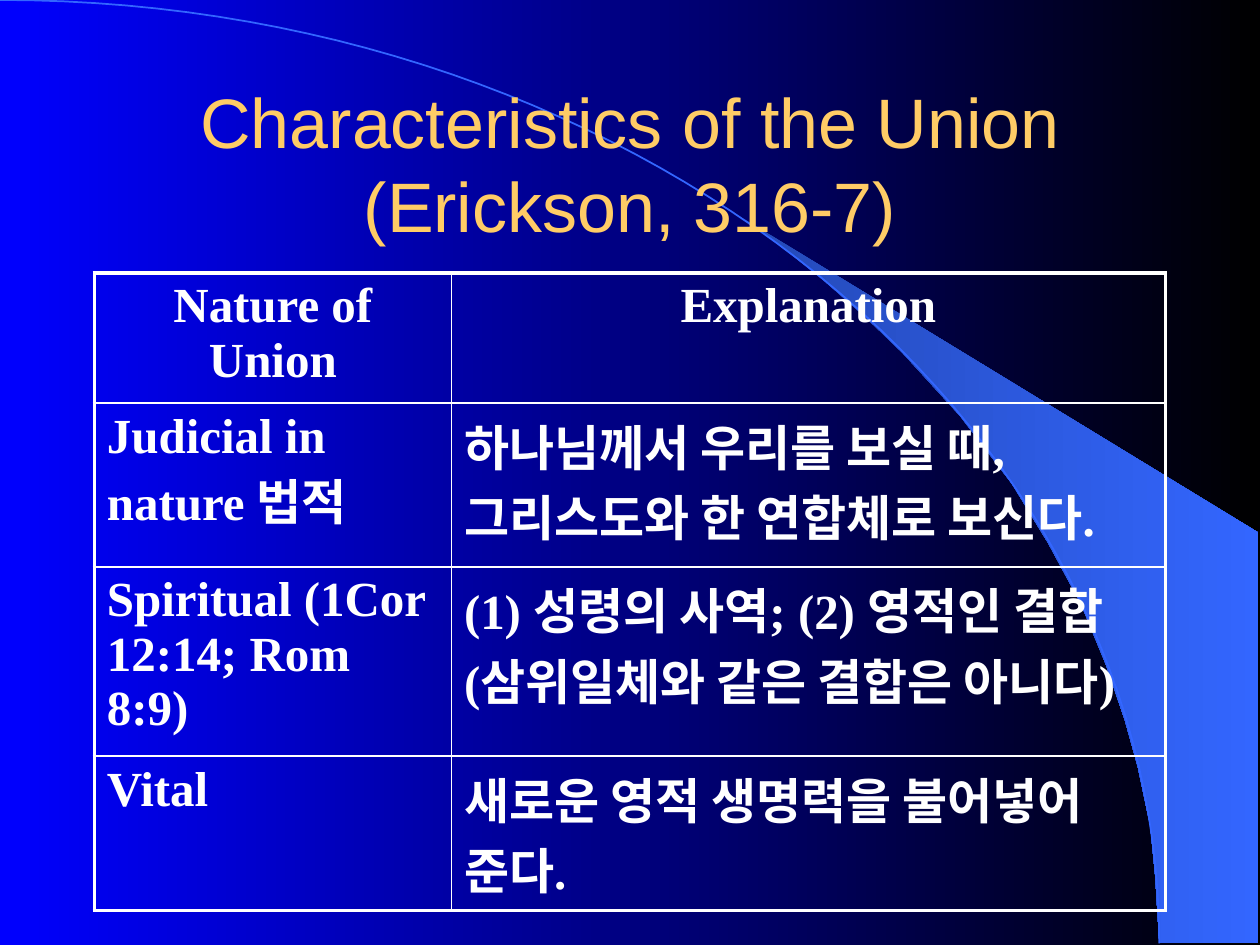
from lxml import etree
from pptx import Presentation
from pptx.dml.color import RGBColor
from pptx.enum.text import MSO_ANCHOR as Anchor, PP_ALIGN as Align
from pptx.oxml import parse_xml
from pptx.oxml.ns import nsdecls
from pptx.util import Cm, Pt


def color(hex_code):
    return RGBColor.from_string(hex_code)


def fade(fill, start, end):
    fill.gradient()
    fill.gradient_angle = 0
    for stop, hex_code, position in zip(fill.gradient_stops, (start, end), (0, 1)):
        stop.color.rgb = color(hex_code)
        stop.position = position


prs = Presentation()
prs.slide_width, prs.slide_height = Cm(25.4), Cm(19.05)
slide = prs.slides.add_slide(prs.slide_layouts[6])
fade(slide.background.fill, "0000FF", "000000")

beam_points = [
    (23.37, 19), (25.37, 19.02), (25.37, 10.74), (14.96, 4.39), (15.85, 5.05),
    (16.59, 5.64), (17.4, 6.35), (18.19, 7.11), (19.35, 8.38), (20.4, 9.75),
    (21.13, 10.95), (21.79, 12.17), (22.3, 13.41), (22.68, 14.53),
    (22.94, 15.47), (23.19, 16.66), (23.29, 17.68),
]
steps = 60
arc_points = []
for step in range(steps + 1):
    t = step / steps
    x = 3 * 12.9 * t * (1 - t) ** 2 + 3 * 23.37 * t ** 2 * (1 - t) + 23.37 * t ** 3
    y = 3 * 8.51 * t ** 2 * (1 - t) + 19.02 * t ** 3
    arc_points.append((x, y))

outlines = []
for points, closed in ((beam_points, True), (arc_points, False)):
    corners = [(Cm(x), Cm(y)) for x, y in points]
    builder = slide.shapes.build_freeform(*corners[0])
    builder.add_line_segments(corners[1:], close=closed)
    outline = builder.convert_to_shape()
    outline.shadow.inherit = False
    outlines.append(outline)
beam, arc = outlines
fade(beam.fill, "2449B6", "3366FF")
beam.line.fill.background()
arc.fill.background()
arc.line.color.rgb = color("3366FF")
arc.line.width = Pt(1)

title = slide.shapes.add_textbox(Cm(1.9), Cm(1.68), Cm(21.6), Cm(3.18)).text_frame
title.word_wrap = True
title.vertical_anchor = Anchor.MIDDLE
title.text = "Characteristics of the Union (Erickson, 316-7)"
heading = title.paragraphs[0]
heading.alignment = Align.CENTER
heading.font.name = "Arial"
heading.font.size = Pt(40)
heading.font.color.rgb = color("FFCC66")

union_rows = [
    ("Nature of Union", "Explanation"),
    ("Judicial in nature 법적", "하나님께서 우리를 보실 때, 그리스도와 한 연합체로 보신다."),
    ("Spiritual (1Cor 12:14; Rom 8:9)",
     "(1) 성령의 사역; (2) 영적인 결합 (삼위일체와 같은 결합은 아니다)"),
    ("Vital", "새로운 영적 생명력을 불어넣어 준다."),
]
row_heights = [2.62, 3.3, 3.81, 3.12]
column_widths = [7.2, 14.39]
union = slide.shapes.add_table(
    len(row_heights), len(column_widths), Cm(1.9), Cm(5.5),
    Cm(sum(column_widths)), Cm(sum(row_heights))).table
union.first_row = union.horz_banding = False
for column, width in zip(union.columns, column_widths):
    column.width = Cm(width)
for row, height in zip(union.rows, row_heights):
    row.height = Cm(height)

for r, texts in enumerate(union_rows):
    for c, text in enumerate(texts):
        cell = union.cell(r, c)
        cell.fill.background()
        cell.text_frame.text = text
        paragraph = cell.text_frame.paragraphs[0]
        paragraph.alignment = Align.CENTER if r == 0 else Align.LEFT
        font = paragraph.runs[0].font
        font.name = "Times New Roman"
        font.size = Pt(28)
        font.bold = True
        font.color.rgb = color("FFFFFF")
        outer_sides = {"L": c == 0, "R": c == len(texts) - 1,
                       "T": r == 0, "B": r == len(union_rows) - 1}
        properties = cell._tc.get_or_add_tcPr()
        for i, (side, outer) in enumerate(outer_sides.items()):
            border = parse_xml(f'<a:ln{side} {nsdecls("a")} w="{Pt(2.25 if outer else 1)}"/>')
            solid = etree.SubElement(border, border.tag.replace(f"ln{side}", "solidFill"))
            etree.SubElement(solid, solid.tag.replace("solidFill", "srgbClr"), val="FFFFFF")
            properties.insert(i, border)

prs.save("out.pptx")
